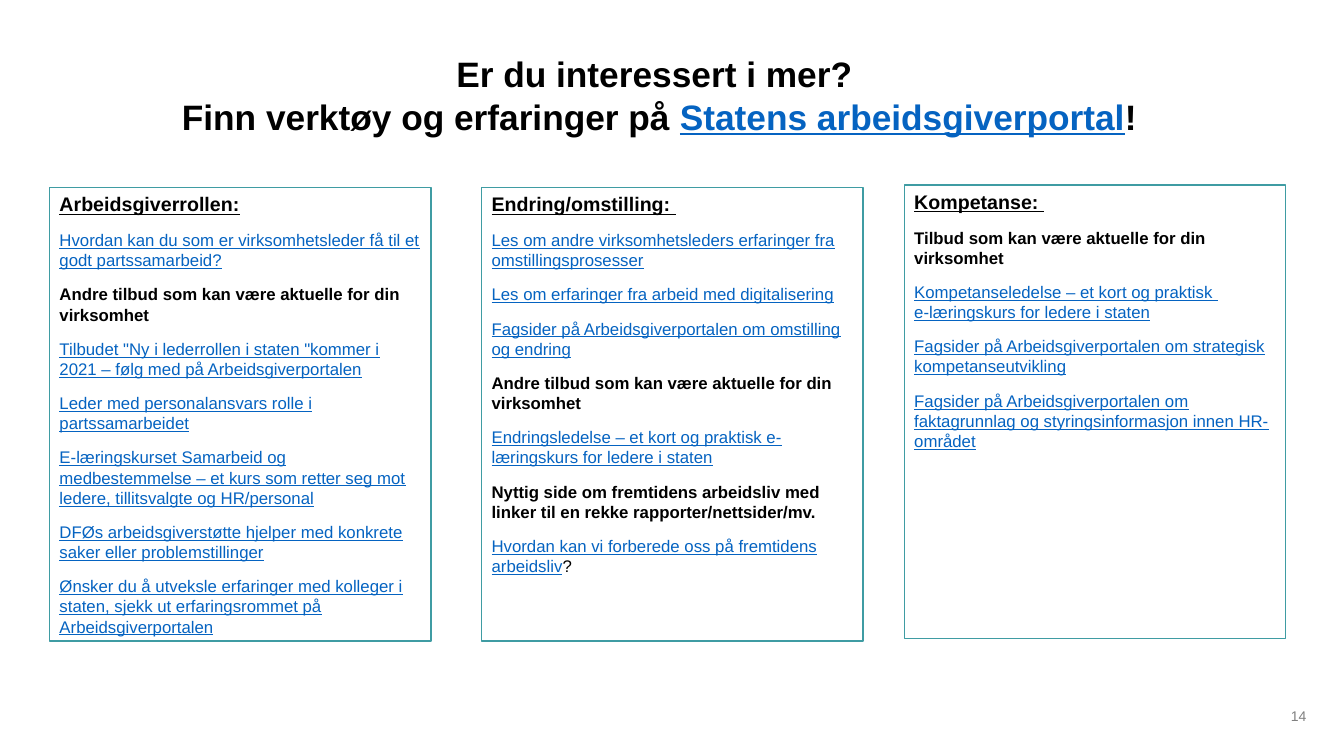
from pptx import Presentation
from pptx.dml.color import RGBColor
from pptx.enum.shapes import MSO_SHAPE
from pptx.enum.text import MSO_ANCHOR, PP_ALIGN
from pptx.util import Cm, Pt

RECTANGLE = MSO_SHAPE.RECTANGLE
TOP, MIDDLE = MSO_ANCHOR.TOP, MSO_ANCHOR.MIDDLE
LEFT, CENTER = PP_ALIGN.LEFT, PP_ALIGN.CENTER

COLORS = {
    "white": "FFFFFF",
    "text": "000000",
    "link": "0563C1",
    "border": "3F9CA3",
    "number": "808080",
}

STYLES = {
    "title": {"size": 25.2, "bold": True, "underline": False, "color": "text"},
    "title_link": {"size": 25.2, "bold": True, "underline": True, "color": "link"},
    "heading": {"size": 14, "bold": True, "underline": True, "color": "text"},
    "link": {"size": 12, "bold": False, "underline": True, "color": "link"},
    "strong": {"size": 12, "bold": True, "underline": False, "color": "text"},
    "plain": {"size": 12, "bold": False, "underline": False, "color": "text"},
    "number": {"size": 10, "bold": False, "underline": False, "color": "number"},
}

TITLE = [[
    ("title", "Er du interessert i mer? \nFinn verktøy og erfaringer på "),
    ("title_link", "Statens arbeidsgiverportal"),
    ("title", "!"),
]]

SLIDE_NUMBER = [[("number", "14")]]

TOPICS = [
    (1.25, 4.72, [
        [("heading", "Arbeidsgiverrollen:")],
        [("link", "Hvordan kan du som er virksomhetsleder få til et godt partssamarbeid?")],
        [("strong", "Andre tilbud som kan være aktuelle for din virksomhet")],
        [("link", 'Tilbudet "Ny i lederrollen i staten "kommer i 2021 – følg med på Arbeidsgiverportalen')],
        [("link", "Leder med personalansvars rolle i partssamarbeidet")],
        [("link", "E-læringskurset Samarbeid og medbestemmelse – et kurs som retter seg mot "
                  "ledere, tillitsvalgte og HR/personal")],
        [("link", "DFØs arbeidsgiverstøtte hjelper med konkrete saker eller problemstillinger")],
        [("link", "Ønsker du å utveksle erfaringer med kolleger i staten, sjekk ut "
                  "erfaringsrommet på Arbeidsgiverportalen")],
    ]),
    (12.14, 4.72, [
        [("heading", "Endring/omstilling: ")],
        [("link", "Les om andre virksomhetsleders erfaringer fra omstillingsprosesser")],
        [("link", "Les om erfaringer fra arbeid med digitalisering")],
        [("link", "Fagsider på Arbeidsgiverportalen om omstilling og endring")],
        [("strong", "Andre tilbud som kan være aktuelle for din virksomhet")],
        [("link", "Endringsledelse – et kort og praktisk e-læringskurs for ledere i staten")],
        [("strong", "Nyttig side om fremtidens arbeidsliv med linker til en rekke "
                    "rapporter/nettsider/mv.")],
        [("link", "Hvordan kan vi forberede oss på fremtidens arbeidsliv"), ("plain", "?")],
    ]),
    (22.79, 4.66, [
        [("heading", "Kompetanse: ")],
        [("strong", "Tilbud som kan være aktuelle for din virksomhet")],
        [("link", "Kompetanseledelse – et kort og praktisk \ne-læringskurs for ledere i staten")],
        [("link", "Fagsider på Arbeidsgiverportalen om strategisk kompetanseutvikling")],
        [("link", "Fagsider på Arbeidsgiverportalen om faktagrunnlag og "
                  "styringsinformasjon innen HR-området")],
    ]),
]
TOPIC_WIDTH, TOPIC_HEIGHT = 9.61, 11.43


def rgb(name):
    return RGBColor.from_string(COLORS[name])


def add_run(paragraph, style, text):
    run = paragraph.add_run()
    run.text = text
    look = STYLES[style]
    values = {
        "name": "Arial",
        "size": Pt(look["size"]),
        "bold": look["bold"],
        "underline": look["underline"],
    }
    for key, value in values.items():
        setattr(run.font, key, value)
    run.font.color.rgb = rgb(look["color"])


def write(frame, paragraphs, anchor, alignment):
    frame.word_wrap = True
    frame.vertical_anchor = anchor
    for index, runs in enumerate(paragraphs):
        paragraph = frame.add_paragraph() if index else frame.paragraphs[0]
        values = {
            "alignment": alignment,
            "line_spacing": 1.0,
            "space_before": Pt(10 if index else 0),
        }
        for key, value in values.items():
            setattr(paragraph, key, value)
        for style, text in runs:
            for line_index, line in enumerate(text.split("\n")):
                if line_index:
                    paragraph.add_line_break()
                add_run(paragraph, style, line)


def add_label(slide, box, paragraphs):
    label = slide.shapes.add_textbox(*map(Cm, box))
    write(label.text_frame, paragraphs, MIDDLE, CENTER)


def add_topic(slide, left, top, paragraphs):
    topic = slide.shapes.add_shape(
        RECTANGLE, Cm(left), Cm(top), Cm(TOPIC_WIDTH), Cm(TOPIC_HEIGHT))
    topic.shadow.inherit = False
    topic.fill.solid()
    topic.fill.fore_color.rgb = rgb("white")
    topic.line.color.rgb = rgb("border")
    topic.line.width = Pt(1)
    write(topic.text_frame, paragraphs, TOP, LEFT)


def main():
    deck = Presentation()
    deck.slide_width, deck.slide_height = Cm(33.87), Cm(19.05)
    slide = deck.slides.add_slide(deck.slide_layouts[6])
    add_label(slide, (3.51, 0.56, 26.21, 3.66), TITLE)
    add_label(slide, (32.1, 17.55, 1.25, 1), SLIDE_NUMBER)
    for left, top, paragraphs in TOPICS:
        add_topic(slide, left, top, paragraphs)
    deck.save("out.pptx")


if __name__ == "__main__":
    main()
